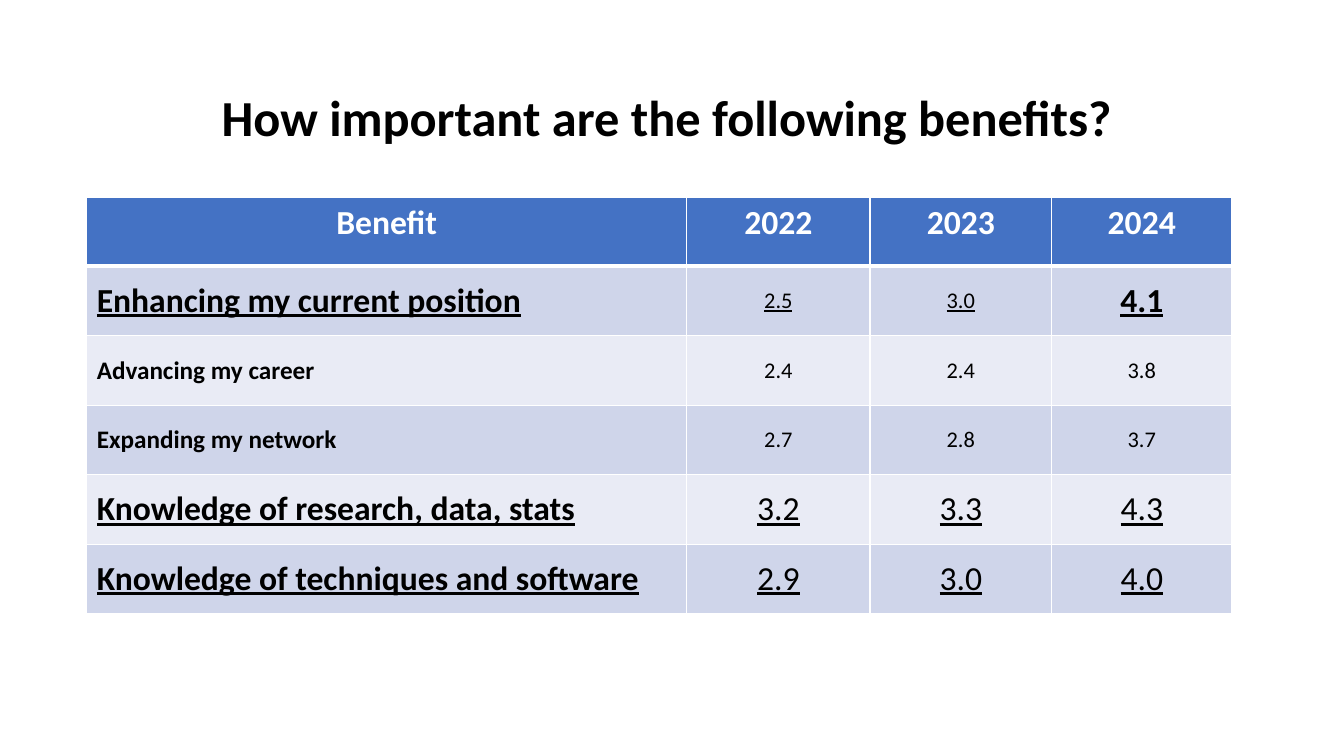
"""Build a slide with a table that rates benefits over three years."""
from dataclasses import dataclass
from typing import Optional

from lxml import etree
from pptx import Presentation
from pptx import util as u
from pptx.dml.color import RGBColor
from pptx.enum import text
from pptx.oxml import ns


@dataclass(frozen=True)
class Theme:
    """Colours, font and type sizes of the slide."""
    font: str = "Calibri"
    ink: str = "000000"
    paper: str = "FFFFFF"
    header: str = "4472C4"
    bands: tuple[str, str] = ("CFD5EA", "E9EBF5")
    title: int = 36
    large: int = 24
    medium: int = 18
    small: int = 16
    rule: int = 1
    header_rule: int = 3


@dataclass(frozen=True)
class Style:
    """Look of one run of text."""
    size: int
    color: str
    bold: bool = False
    underline: bool = False


@dataclass(frozen=True)
class Benefit:
    """One table row, with the styles of its label and scores."""
    label: str
    scores: tuple[str, ...]
    label_style: Style
    score_style: Style
    last_style: Optional[Style] = None


THEME = Theme()
TITLE = Style(THEME.title, THEME.ink, bold=True)
HEADING = Style(THEME.large, THEME.paper, bold=True)
KEY_LABEL = Style(THEME.large, THEME.ink, bold=True, underline=True)
KEY_SCORE = Style(THEME.large, THEME.ink, underline=True)
PLAIN_LABEL = Style(THEME.medium, THEME.ink, bold=True)
PLAIN_SCORE = Style(THEME.small, THEME.ink)
SMALL_KEY_SCORE = Style(THEME.small, THEME.ink, underline=True)

HEADINGS = ("Benefit", "2022", "2023", "2024")
BENEFITS = (
    Benefit("Enhancing my current position", ("2.5", "3.0", "4.1"),
            KEY_LABEL, SMALL_KEY_SCORE, KEY_LABEL),
    Benefit("Advancing my career", ("2.4", "2.4", "3.8"), PLAIN_LABEL, PLAIN_SCORE),
    Benefit("Expanding my network", ("2.7", "2.8", "3.7"), PLAIN_LABEL, PLAIN_SCORE),
    Benefit("Knowledge of research, data, stats", ("3.2", "3.3", "4.3"),
            KEY_LABEL, KEY_SCORE),
    Benefit("Knowledge of techniques and software", ("2.9", "3.0", "4.0"),
            KEY_LABEL, KEY_SCORE),
)
COLUMN_WIDTHS = (5.95, 1.82, 1.8, 1.79)
HEADER_HEIGHT, ROW_HEIGHT = 0.68, 0.69


def add_span(para, words: str, style: Style) -> None:
    """Add one styled run to a paragraph."""
    span = para.add_run()
    span.text = words
    span.font.name = THEME.font
    span.font.size = u.Pt(style.size)
    span.font.bold = style.bold
    span.font.underline = style.underline
    span.font.color.rgb = RGBColor.from_string(style.color)


def add_borders(cell, top: int, bottom: int) -> None:
    """Rule the four sides of a cell, with widths in points."""
    properties = cell._tc.get_or_add_tcPr()
    widths = {"L": THEME.rule, "R": THEME.rule, "T": top, "B": bottom}
    for place, (side, width) in enumerate(widths.items()):
        line = etree.Element(ns.qn(f"a:ln{side}"), w=str(u.Pt(width)))
        fill = etree.SubElement(line, ns.qn("a:solidFill"))
        etree.SubElement(fill, ns.qn("a:srgbClr"), val=THEME.paper)
        properties.insert(place, line)


def fill_cell(cell, words: str, style: Style, fill: str, row: int, column: int) -> None:
    """Write, colour and rule one table cell."""
    is_header = row == 0
    cell.fill.solid()
    cell.fill.fore_color.rgb = RGBColor.from_string(fill)
    cell.vertical_anchor = text.MSO_ANCHOR.TOP if is_header else text.MSO_ANCHOR.MIDDLE
    para = cell.text_frame.paragraphs[0]
    centred = is_header or column > 0
    para.alignment = text.PP_ALIGN.CENTER if centred else text.PP_ALIGN.LEFT
    add_span(para, words, style)
    add_borders(cell,
                top=THEME.header_rule if row == 1 else THEME.rule,
                bottom=THEME.header_rule if is_header else THEME.rule)


def add_title(page, words: str) -> None:
    """Add the slide title."""
    box = page.shapes.add_textbox(u.Inches(2.1), u.Inches(0.81),
                                  u.Inches(9.13), u.Inches(0.71))
    box.text_frame.word_wrap = False
    box.text_frame.auto_size = text.MSO_AUTO_SIZE.SHAPE_TO_FIT_TEXT
    add_span(box.text_frame.paragraphs[0], words, TITLE)


def add_benefit_table(page) -> None:
    """Add the table of benefits and yearly scores."""
    row_heights = [HEADER_HEIGHT] + [ROW_HEIGHT] * len(BENEFITS)
    table = page.shapes.add_table(
        len(row_heights), len(HEADINGS), u.Inches(0.86), u.Inches(1.96),
        u.Inches(sum(COLUMN_WIDTHS)), u.Inches(sum(row_heights))).table
    for column, width in zip(table.columns, COLUMN_WIDTHS):
        column.width = u.Inches(width)
    for row, height in zip(table.rows, row_heights):
        row.height = u.Inches(height)

    for column, heading in enumerate(HEADINGS):
        fill_cell(table.cell(0, column), heading, HEADING, THEME.header, 0, column)
    for row, benefit in enumerate(BENEFITS, start=1):
        band = THEME.bands[(row - 1) % 2]
        last_style = benefit.last_style or benefit.score_style
        styles = (benefit.label_style, benefit.score_style,
                  benefit.score_style, last_style)
        entries = zip((benefit.label, *benefit.scores), styles)
        for column, (words, style) in enumerate(entries):
            fill_cell(table.cell(row, column), words, style, band, row, column)


def main() -> None:
    """Build and save the deck."""
    deck = Presentation()
    deck.slide_width, deck.slide_height = u.Inches(13.33), u.Inches(7.5)
    page = deck.slides.add_slide(deck.slide_layouts[6])
    add_benefit_table(page)
    add_title(page, "How important are the following benefits?")
    deck.save("out.pptx")


if __name__ == "__main__":
    main()
